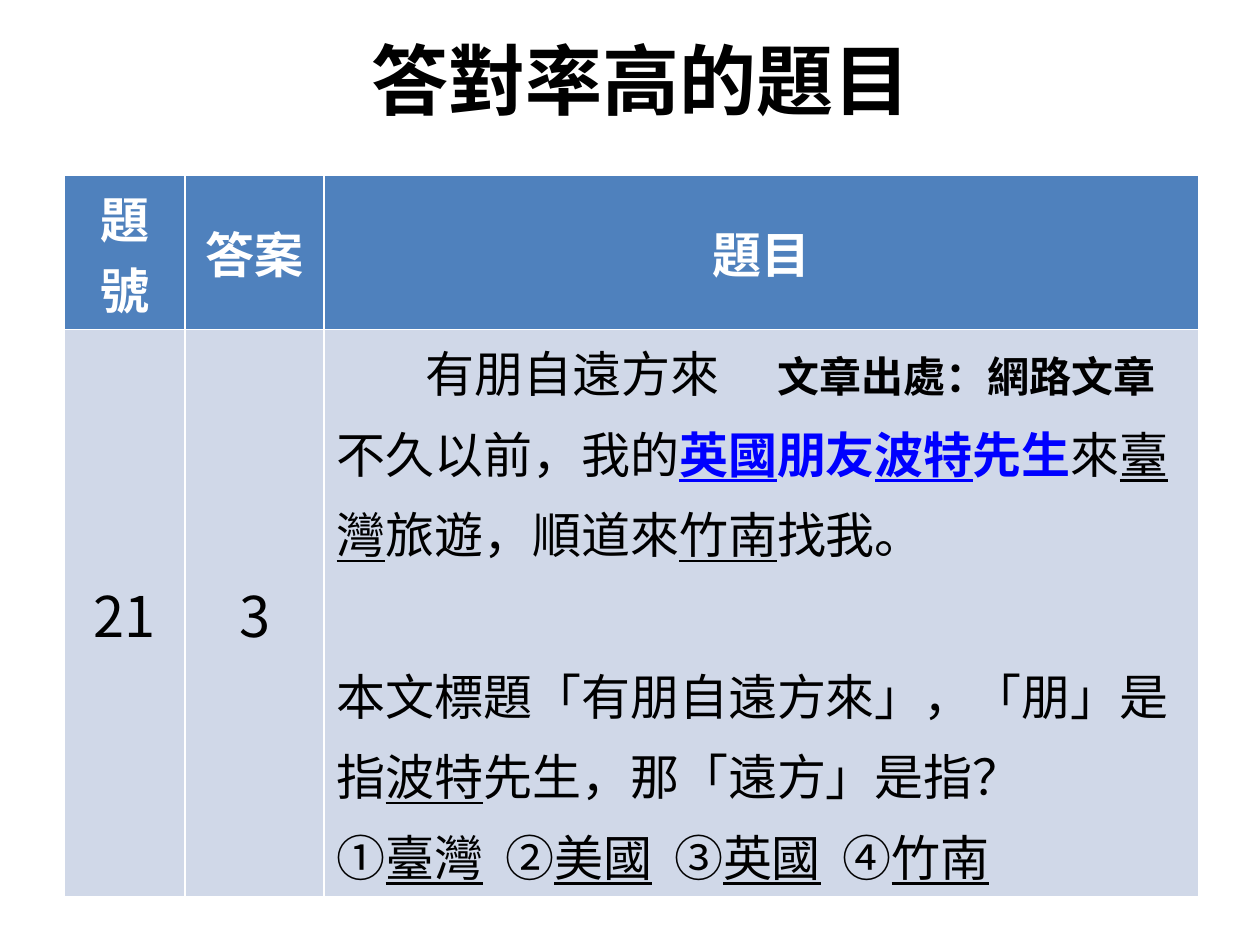
from lxml import etree
from pptx import Presentation
from pptx.dml.color import RGBColor
from pptx.enum.text import MSO_ANCHOR, PP_ALIGN
from pptx.oxml.ns import qn
from pptx.util import Pt

MIDDLE = MSO_ANCHOR.MIDDLE
CENTER = PP_ALIGN.CENTER

BLACK = RGBColor(0x00, 0x00, 0x00)
WHITE = RGBColor(0xFF, 0xFF, 0xFF)
BLUE = RGBColor(0x00, 0x00, 0xFF)
HEADER_FILL = RGBColor(0x4F, 0x81, 0xBD)
BODY_FILL = RGBColor(0xD0, 0xD8, 0xE8)

CJK_FONT = "Noto Sans CJK SC"
TITLE_FORMAT = {"name": CJK_FONT, "size": Pt(44), "bold": True, "color": BLACK}
HEADER_FORMAT = {"name": "Calibri", "size": Pt(28), "bold": True, "color": WHITE}
NUMBER_FORMAT = {"name": CJK_FONT, "size": Pt(32), "bold": False, "color": BLACK}
PLAIN = {"name": CJK_FONT, "size": Pt(28), "bold": False, "color": BLACK}
NAME = {**PLAIN, "underline": True}
SOURCE = {**PLAIN, "size": Pt(24), "bold": True}
KEY = {**PLAIN, "bold": True, "color": BLUE}
KEY_NAME = {**KEY, "underline": True}

LINE_GAP = 5.6
BLANK_LINE = 46.1
OPTION_STEP = 96.4

HEADERS = ["題號", "答案", "題目"]
ANSWERS = ["21", "3"]
OPTIONS = [("①", "臺灣"), ("②", "美國"), ("③", "英國"), ("④", "竹南")]
OPTION_RUNS = [
    run
    for index, (mark, place) in enumerate(OPTIONS)
    for run in ((("\t" if index else "") + mark, PLAIN), (place, NAME))
]

# Each line: runs, space before, first-line indent, tab stops (points)
QUESTION = [
    ([("有朋自遠方來\t", PLAIN), ("文章出處：網路文章", SOURCE)], LINE_GAP, 51, [249]),
    ([("不久以前，我的", PLAIN), ("英國", KEY_NAME), ("朋友", KEY),
      ("波特", KEY_NAME), ("先生", KEY), ("來", PLAIN), ("臺", NAME)], LINE_GAP, 0, []),
    ([("灣", NAME), ("旅遊，順道來", PLAIN), ("竹南", NAME), ("找我。", PLAIN)],
     LINE_GAP, 0, []),
    ([("本文標題「有朋自遠方來」，「朋」是", PLAIN)], LINE_GAP + BLANK_LINE, 0, []),
    ([("指", PLAIN), ("波特", NAME), ("先生，那「遠方」是指？", PLAIN)], LINE_GAP, 0, []),
    (OPTION_RUNS, LINE_GAP, 0, [OPTION_STEP * step for step in (1, 2, 3)]),
]


def add_run(paragraph, text, text_format):
    run = paragraph.add_run()
    run.text = text
    for key, value in text_format.items():
        if key == "color":
            run.font.color.rgb = value
        else:
            setattr(run.font, key, value)
    if text_format["name"] == CJK_FONT:
        properties = run._r.get_or_add_rPr()
        etree.SubElement(properties, qn("a:ea"), typeface=CJK_FONT)


def set_indent_and_tabs(paragraph, indent, stops):
    properties = paragraph._p.get_or_add_pPr()
    if indent:
        properties.set("marL", "0")
        properties.set("indent", str(Pt(indent)))
    if stops:
        tab_list = etree.SubElement(properties, qn("a:tabLst"))
        for stop in stops:
            etree.SubElement(tab_list, qn("a:tab"), pos=str(Pt(stop)), algn="l")


def place_title(slide, text, left, top, width, height):
    title = slide.shapes.title
    title.left, title.top, title.width, title.height = left, top, width, height
    title.text_frame.vertical_anchor = MIDDLE
    paragraph = title.text_frame.paragraphs[0]
    paragraph.alignment = CENTER
    add_run(paragraph, text, TITLE_FORMAT)


def fill_cell(cell, color):
    cell.fill.solid()
    cell.fill.fore_color.rgb = color


def fill_label_cell(cell, text, text_format, color):
    fill_cell(cell, color)
    cell.vertical_anchor = MIDDLE
    paragraph = cell.text_frame.paragraphs[0]
    paragraph.alignment = CENTER
    add_run(paragraph, text, text_format)


def fill_question_cell(cell):
    fill_cell(cell, BODY_FILL)
    frame = cell.text_frame
    for index, (runs, space, indent, stops) in enumerate(QUESTION):
        paragraph = frame.add_paragraph() if index else frame.paragraphs[0]
        paragraph.space_before = Pt(space)
        set_indent_and_tabs(paragraph, indent, stops)
        for text, text_format in runs:
            add_run(paragraph, text, text_format)


def add_question_table(slide, left, top, width, height):
    """The default table style supplies the white cell borders."""
    table = slide.shapes.add_table(2, 3, left, top, width, height).table
    number_width, answer_width, header_height = Pt(69), Pt(79.4), Pt(85)
    widths = [number_width, answer_width, width - number_width - answer_width]
    for column, column_width in zip(table.columns, widths):
        column.width = column_width
    table.rows[0].height = header_height
    table.rows[1].height = height - header_height

    for column, text in enumerate(HEADERS):
        fill_label_cell(table.cell(0, column), text, HEADER_FORMAT, HEADER_FILL)
    for column, text in enumerate(ANSWERS):
        fill_label_cell(table.cell(1, column), text, NUMBER_FORMAT, BODY_FILL)
    fill_question_cell(table.cell(1, 2))


def main():
    presentation = Presentation()
    presentation.slide_width, presentation.slide_height = Pt(720), Pt(540)
    slide = presentation.slides.add_slide(presentation.slide_layouts[5])
    place_title(slide, "答對率高的題目", Pt(42.5), Pt(0), Pt(648), Pt(90))
    add_question_table(slide, Pt(36.8), Pt(100.2), Pt(648), Pt(402.5))
    presentation.save("out.pptx")


if __name__ == "__main__":
    main()
